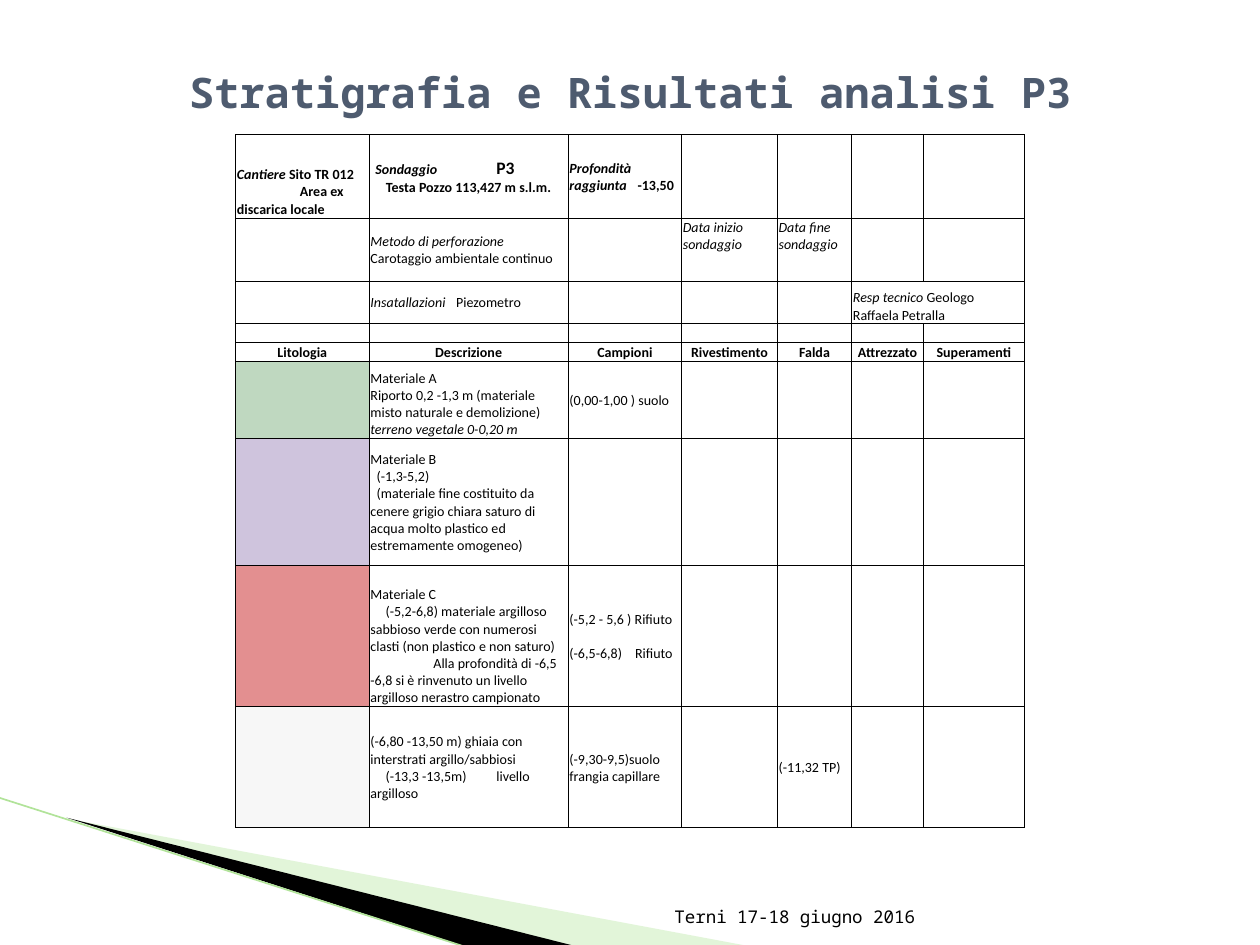
from dataclasses import dataclass

from lxml import etree
from pptx import Presentation
from pptx.dml.color import RGBColor
from pptx.enum import shapes, text
from pptx.oxml import ns
from pptx.util import Inches, Pt


@dataclass(frozen=True)
class Theme:
    title: str = "4E5B6F"
    ink: str = "000000"
    pale_green: str = "B8E7A1"
    line_green: str = "B1E399"
    display_font: str = "Noto Sans Mono"
    table_font: str = "Calibri"
    title_size: int = 24
    strong_size: int = 10
    cell_size: int = 8
    strata: tuple = ("BFD8C0", "CFC4DD", "E38F90", "F7F7F7")


@dataclass(frozen=True)
class Line:
    text: str
    indent: float = 0
    tab: float = 0
    before: float = 0
    strong_tail: str = ""
    centered: bool = False


THEME = Theme()
TOP, MIDDLE, BOTTOM = (text.MSO_ANCHOR.TOP, text.MSO_ANCHOR.MIDDLE, text.MSO_ANCHOR.BOTTOM)
COLUMN_WIDTHS = (1.06, 1.58, 0.9, 0.76, 0.59, 0.57, 0.8)
ROW_HEIGHTS = (0.66, 0.5, 0.34, 0.15, 0.15, 0.61, 1.01, 1.12, 0.96)
HEADER_ROW = 4
BOLD_ROWS = (0, HEADER_ROW)
HEADERS = ("Litologia", "Descrizione", "Campioni", "Rivestimento", "Falda", "Attrezzato", "Superamenti")
CELLS = {
    (0, 0): (BOTTOM, [Line("*Cantiere* Sito TR 012"), Line("Area ex discarica locale", indent=0.5)]),
    (0, 1): (MIDDLE, [Line("*Sondaggio*\t", indent=0.04, tab=1.32, strong_tail="P3"),
                      Line("Testa Pozzo 113,427 m s.l.m.", centered=True)]),
    (0, 2): (MIDDLE, [Line("*Profondità*"), Line("*raggiunta*\t-13,50", tab=0.54)]),
    (1, 1): (MIDDLE, [Line("*Metodo di perforazione*"), Line("Carotaggio ambientale continuo")]),
    (1, 3): (TOP, [Line("*Data inizio sondaggio*")]),
    (1, 4): (TOP, [Line("*Data fine sondaggio*")]),
    (2, 1): (MIDDLE, [Line("*Insatallazioni*\tPiezometro", tab=0.68)]),
    (2, 5): (BOTTOM, [Line("*Resp tecnico* Geologo"), Line("Raffaela Petralla")]),
    (5, 1): (BOTTOM, [Line("Materiale A"),
                      Line("Riporto 0,2 -1,3 m (materiale misto naturale e demolizione)"),
                      Line("*terreno vegetale 0-0,20 m*")]),
    (5, 2): (MIDDLE, [Line("(0,00-1,00 ) suolo")]),
    (6, 1): (MIDDLE, [Line("Materiale B"), Line("(-1,3-5,2)", indent=0.05),
                      Line("(materiale fine costituito da cenere grigio chiara saturo di acqua "
                           "molto plastico ed estremamente omogeneo)", indent=0.05)]),
    (7, 1): (BOTTOM, [Line("Materiale C"),
                      Line("(-5,2-6,8) materiale argilloso sabbioso verde con numerosi clasti "
                           "(non plastico e non saturo)", indent=0.12),
                      Line("Alla profondità di -6,5 -6,8 si è rinvenuto un livello argilloso "
                           "nerastro campionato", indent=0.5)]),
    (7, 2): (MIDDLE, [Line("(-5,2 - 5,6 ) Rifiuto"),
                      Line("(-6,5-6,8)\tRifiuto", tab=0.52, before=9.75)]),
    (8, 1): (MIDDLE, [Line("(-6,80 -13,50 m) ghiaia con interstrati argillo/sabbiosi"),
                      Line("(-13,3 -13,5m)\tlivello argilloso", indent=0.12, tab=0.9)]),
    (8, 2): (MIDDLE, [Line("(-9,30-9,5)suolo frangia capillare")]),
    (8, 4): (MIDDLE, [Line("(-11,32 TP)")]),
}


def rgb(color):
    return RGBColor.from_string(color)


def add_element(parent, tag, **attributes):
    return etree.SubElement(parent, ns.qn(tag), {key: str(value) for key, value in attributes.items()})


def style_font(font, name, size, color, bold=False):
    font.name, font.size, font.bold = name, Pt(size), bold
    font.color.rgb = rgb(color)


def add_wedge(slide, points, color, opacity=None):
    corners = [(Inches(x), Inches(y)) for x, y in points]
    builder = slide.shapes.build_freeform(*corners[0], scale=1.0)
    builder.add_line_segments(corners[1:], close=True)
    shape = builder.convert_to_shape()
    shape.shadow.inherit = False
    shape.fill.solid()
    shape.fill.fore_color.rgb = rgb(color)
    shape.line.fill.background()
    if opacity is not None:
        swatch = shape.fill._xPr.find(".//" + ns.qn("a:srgbClr"))
        add_element(swatch, "a:alpha", val=opacity * 1000)


def add_accent_line(slide):
    connector = slide.shapes.add_connector(
        shapes.MSO_CONNECTOR.STRAIGHT, Inches(-0.01), Inches(6.33), Inches(3.71), Inches(7.52))
    connector.line.color.rgb = rgb(THEME.line_green)
    connector.line.width = Pt(0.95)
    add_element(connector._element.spPr, "a:effectLst")


def set_borders(cell):
    properties = cell._tc.get_or_add_tcPr()
    for position, side in enumerate(("a:lnL", "a:lnR", "a:lnT", "a:lnB")):
        border = etree.Element(ns.qn(side), w=str(Pt(0.5)))
        add_element(add_element(border, "a:solidFill"), "a:srgbClr", val=THEME.ink)
        properties.insert(position, border)


def write_line(paragraph, line, bold):
    properties = paragraph._p.get_or_add_pPr()
    if line.indent:
        properties.set("marL", "0")
        properties.set("indent", str(Inches(line.indent)))
    if line.before:
        paragraph.space_before = Pt(line.before)
    if line.tab:
        add_element(add_element(properties, "a:tabLst"), "a:tab", pos=Inches(line.tab), algn="l")
    if line.centered:
        paragraph.alignment = text.PP_ALIGN.CENTER
    style_font(paragraph.font, THEME.table_font, THEME.cell_size, THEME.ink, bold)
    for position, part in enumerate(line.text.split("*")):
        if part:
            run = paragraph.add_run()
            run.text = part
            if position % 2:
                run.font.italic = True
    if line.strong_tail:
        run = paragraph.add_run()
        run.text = line.strong_tail
        run.font.size = Pt(THEME.strong_size)


def fill_cell(cell, anchor, lines, bold):
    cell.margin_left = cell.margin_right = cell.margin_top = Inches(0.01)
    cell.margin_bottom = 0
    cell.vertical_anchor = anchor
    cell.fill.background()
    set_borders(cell)
    frame = cell.text_frame
    if not lines:
        add_element(frame.paragraphs[0]._p, "a:endParaRPr", sz=THEME.cell_size * 100)
    for position, line in enumerate(lines):
        paragraph = frame.add_paragraph() if position else frame.paragraphs[0]
        write_line(paragraph, line, bold)


def add_log_table(slide):
    table = slide.shapes.add_table(
        len(ROW_HEIGHTS), len(COLUMN_WIDTHS), Inches(1.87), Inches(1.07),
        Inches(sum(COLUMN_WIDTHS)), Inches(sum(ROW_HEIGHTS))).table
    table.first_row = table.horz_banding = False
    for column, width in zip(table.columns, COLUMN_WIDTHS):
        column.width = Inches(width)
    for row, height in zip(table.rows, ROW_HEIGHTS):
        row.height = Inches(height)
    headers = {(HEADER_ROW, column): (MIDDLE, [Line(label, centered=True)])
               for column, label in enumerate(HEADERS)}
    contents = CELLS | headers
    for row in range(len(ROW_HEIGHTS)):
        for column in range(len(COLUMN_WIDTHS)):
            anchor, lines = contents.get((row, column), (TOP, []))
            fill_cell(table.cell(row, column), anchor, lines, row in BOLD_ROWS)
    table.cell(2, 5).merge(table.cell(2, 6))
    for row, color in enumerate(THEME.strata, HEADER_ROW + 1):
        fill = table.cell(row, 0).fill
        fill.solid()
        fill.fore_color.rgb = rgb(color)


def write_label(shape, box, wording, size, color, bold, alignment, anchor):
    shape.left, shape.top, shape.width, shape.height = map(Inches, box)
    frame = shape.text_frame
    frame.word_wrap = True
    frame.vertical_anchor = anchor
    paragraph = frame.paragraphs[0]
    paragraph.text = wording
    paragraph.alignment = alignment
    style_font(paragraph.font, THEME.display_font, size, color, bold)


def main():
    presentation = Presentation()
    presentation.slide_width, presentation.slide_height = Inches(10), Inches(7.5)
    slide = presentation.slides.add_slide(presentation.slide_layouts[5])
    add_wedge(slide, [(0.55, 6.5), (5.95, 7.51), (4.56, 7.51)], THEME.pale_green, 40)
    add_wedge(slide, [(0.53, 6.49), (4.57, 7.51), (3.72, 7.52)], THEME.ink)
    add_accent_line(slide)
    add_log_table(slide)
    write_label(slide.shapes.title, (0.5, 0.3, 9, 0.85), "Stratigrafia e Risultati analisi P3",
                THEME.title_size, THEME.title, True, text.PP_ALIGN.CENTER, MIDDLE)
    write_label(slide.shapes.add_textbox(0, 0, 0, 0), (4.79, 7.01, 2.57, 0.4), "Terni 17-18 giugno 2016",
                THEME.strong_size, THEME.ink, False, text.PP_ALIGN.RIGHT, BOTTOM)
    presentation.save("out.pptx")


if __name__ == "__main__":
    main()
